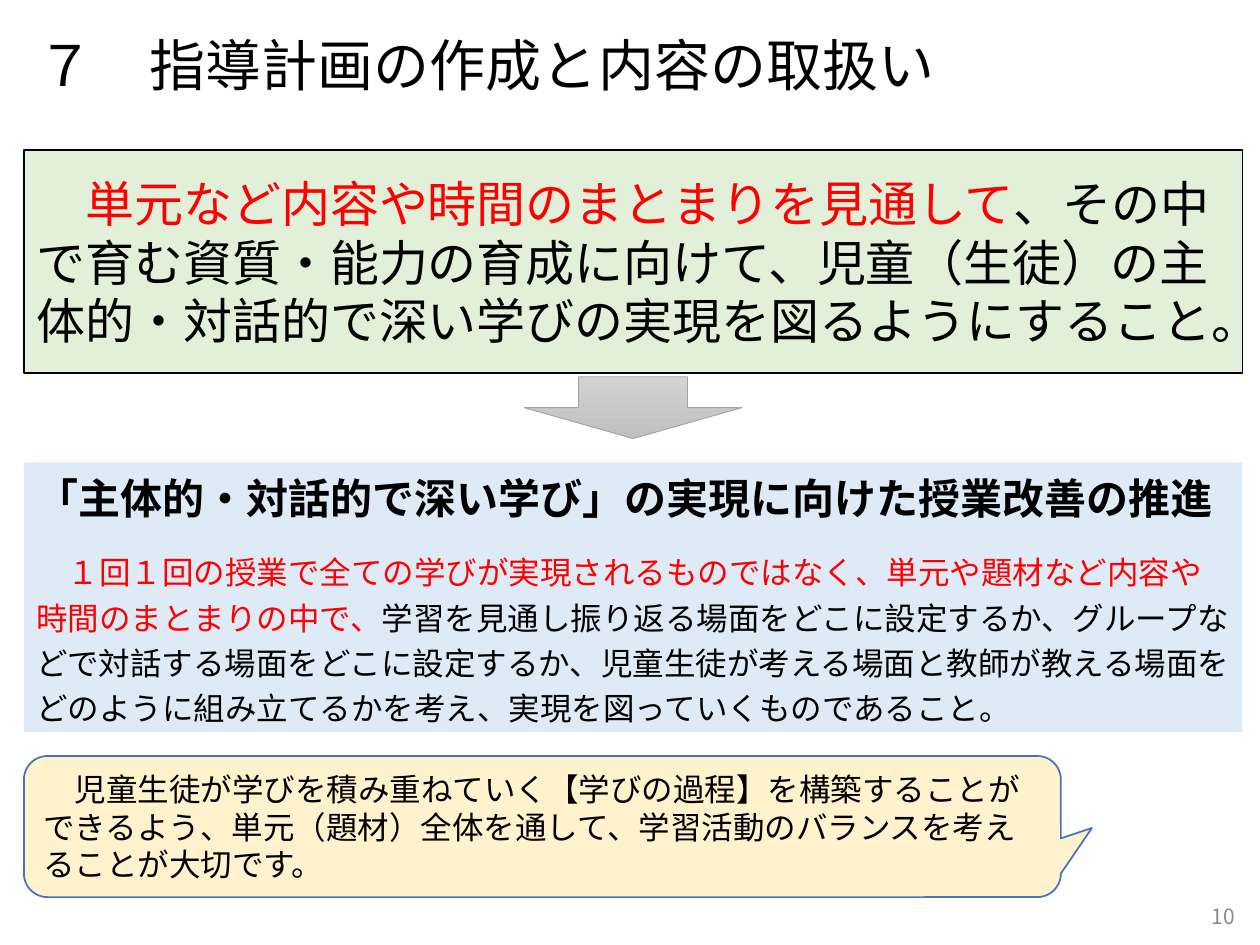
from lxml import etree
from pptx import Presentation
from pptx import util as u
from pptx.dml.color import RGBColor
from pptx.enum import shapes, text
from pptx.oxml.ns import qn

FONT = "Noto Sans CJK JP"
BLACK = RGBColor(0x00, 0x00, 0x00)
RED = RGBColor(0xFF, 0x00, 0x00)
GREEN = RGBColor(0xE2, 0xF0, 0xD9)
BLUE = RGBColor(0xDE, 0xEB, 0xF7)
CREAM = RGBColor(0xFF, 0xF2, 0xCC)
CALLOUT_LINE = RGBColor(0x44, 0x72, 0xC4)
ARROW_LINE = RGBColor(0xA5, 0xA5, 0xA5)
ARROW_TOP = RGBColor(0xD2, 0xD2, 0xD2)
ARROW_BOTTOM = RGBColor(0xC0, 0xC0, 0xC0)
NUMBER_GRAY = RGBColor(0x8C, 0x8C, 0x8C)

LEFT, WIDTH = 0.19, 9.67
LINE_HEIGHT = 1.2  # single line spacing as a multiple of the text size


def inches(*lengths):
    return [u.Inches(length) for length in lengths]


def place(shape, *box):
    shape.left, shape.top, shape.width, shape.height = inches(*box)


def paint(shape, fill, line=None, line_width=0.75):
    shape.fill.solid()
    shape.fill.fore_color.rgb = fill
    if line is None:
        shape.line.fill.background()
    else:
        shape.line.color.rgb = line
        shape.line.width = u.Pt(line_width)


def add_block(slide, kind, *box):
    shape = slide.shapes.add_shape(kind, *inches(*box))
    shape.shadow.inherit = False
    return shape


def prepare_frame(shape, anchor=text.MSO_ANCHOR.MIDDLE):
    frame = shape.text_frame
    frame.word_wrap = True
    frame.auto_size = text.MSO_AUTO_SIZE.NONE
    frame.vertical_anchor = anchor
    return frame


def write(paragraph, runs, size, bold=False, spacing=1, before=0,
          align=text.PP_ALIGN.LEFT):
    """Fill a paragraph with (wording, colour) runs of one font."""
    paragraph.alignment = align
    paragraph.line_spacing = u.Pt(round(size * LINE_HEIGHT * spacing, 1))
    paragraph.space_before = u.Pt(before)
    paragraph.font.name = FONT
    paragraph.font.size = u.Pt(size)
    paragraph.font.bold = bold
    defaults = paragraph._p.pPr.find(qn("a:defRPr"))
    etree.SubElement(defaults, qn("a:ea"), typeface=FONT)
    for wording, colour in runs:
        run = paragraph.add_run()
        run.text = wording
        run.font.color.rgb = colour


def remove_bullet(paragraph):
    properties = paragraph._p.get_or_add_pPr()
    properties.set("marL", "0")
    properties.set("indent", "0")
    properties.insert_element_before(
        properties.makeelement(qn("a:buNone")), "a:tabLst", "a:defRPr", "a:extLst")


def fill_title(slide):
    title = slide.shapes.title
    place(title, 0.2, 0.2, 9.48, 0.67)
    write(prepare_frame(title).paragraphs[0],
          [("７　指導計画の作成と内容の取扱い", BLACK)], 32, spacing=0.9)


def fill_policy(slide):
    body = slide.placeholders[1]
    place(body, LEFT, 1.19, WIDTH, 1.77)
    paint(body, GREEN, BLACK)
    paragraph = prepare_frame(body).paragraphs[0]
    write(paragraph, [
        ("　単元など内容や時間のまとまりを見通して", RED),
        ("、その中で育む資質・能力の育成に向けて、児童（生徒）の主体的・対話的で"
         "深い学びの実現を図るようにすること。", BLACK),
    ], 28, before=10)
    remove_bullet(paragraph)


def add_down_arrow(slide):
    arrow = add_block(slide, shapes.MSO_SHAPE.DOWN_ARROW, 4.16, 2.99, 1.73, 0.49)
    paint(arrow, ARROW_TOP, ARROW_LINE, 0.5)
    arrow.fill.gradient()
    arrow.fill.gradient_angle = 270
    for stop, colour in zip(arrow.fill.gradient_stops, (ARROW_TOP, ARROW_BOTTOM)):
        stop.color.rgb = colour


def add_improvement_panel(slide):
    panel = add_block(slide, shapes.MSO_SHAPE.RECTANGLE, LEFT, 3.67, WIDTH, 2.14)
    paint(panel, BLUE)
    frame = prepare_frame(panel, text.MSO_ANCHOR.TOP)
    frame.margin_top = u.Inches(0.08)
    write(frame.paragraphs[0],
          [("「主体的・対話的で深い学び」の実現に向けた授業改善の推進", BLACK)],
          24, bold=True)
    write(frame.add_paragraph(), [
        ("　１回１回の授業で全ての学びが実現されるものではなく、"
         "単元や題材など内容や時間のまとまりの中で、", RED),
        ("学習を見通し振り返る場面をどこに設定するか、グループなどで対話する場面を"
         "どこに設定するか、児童生徒が考える場面と教師が教える場面をどのように"
         "組み立てるかを考え、実現を図っていくものであること。", BLACK),
    ], 18, spacing=1.2, before=13)


def add_advice_callout(slide):
    callout = add_block(slide, shapes.MSO_SHAPE.ROUNDED_RECTANGULAR_CALLOUT,
                        LEFT, 6, 8.23, 1.12)
    callout.adjustments[0] = 0.53
    callout.adjustments[1] = 0.01
    paint(callout, CREAM, CALLOUT_LINE, 1)
    write(prepare_frame(callout).paragraphs[0], [
        ("　児童生徒が学びを積み重ねていく【学びの過程】を構築することができるよう、"
         "単元（題材）全体を通して、学習活動のバランスを考えることが大切です。", BLACK),
    ], 18)


def add_page_number(slide):
    box = slide.shapes.add_textbox(*inches(7.65, 7.07, 2.25, 0.4))
    write(prepare_frame(box).paragraphs[0], [("10", NUMBER_GRAY)], 12,
          align=text.PP_ALIGN.RIGHT)


def main():
    presentation = Presentation()
    presentation.slide_width, presentation.slide_height = inches(10, 7.5)
    slide = presentation.slides.add_slide(presentation.slide_layouts[1])
    fill_title(slide)
    fill_policy(slide)
    add_improvement_panel(slide)
    add_down_arrow(slide)
    add_advice_callout(slide)
    add_page_number(slide)
    presentation.save("out.pptx")


if __name__ == "__main__":
    main()
